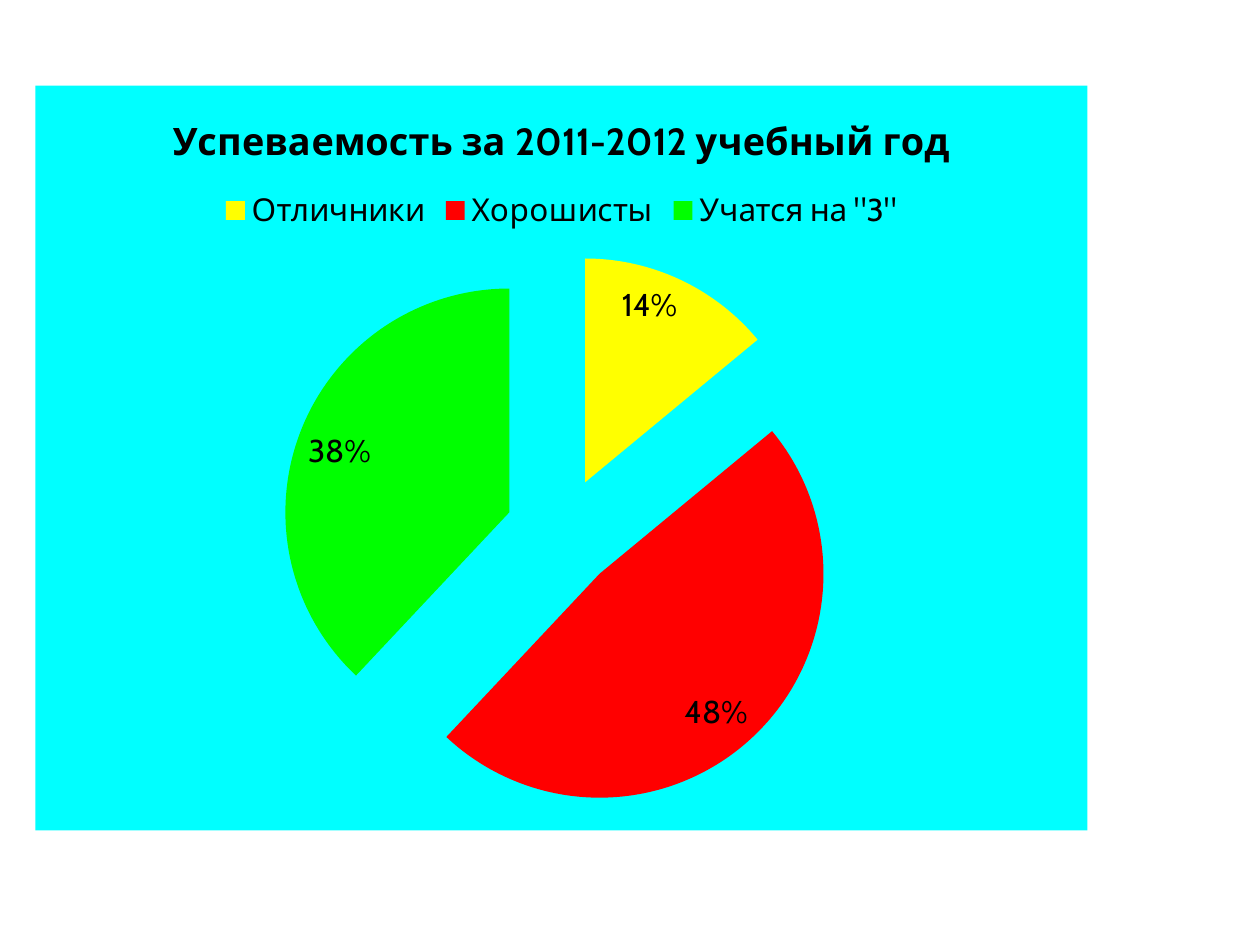
from pptx import Presentation
from pptx.chart.data import CategoryChartData
from pptx.dml.color import RGBColor
from pptx.enum.chart import XL_CHART_TYPE, XL_LABEL_POSITION, XL_LEGEND_POSITION
from pptx.oxml import parse_xml
from pptx.oxml.ns import nsdecls
from pptx.util import Inches, Pt

BLACK = RGBColor(0x00, 0x00, 0x00)
CYAN = "00FFFF"
TITLE = "Успеваемость за 2011-2012 учебный год"
SLICES = [
    ("Отличники", 14, RGBColor(0xFF, 0xFF, 0x00)),
    ("Хорошисты", 48, RGBColor(0xFF, 0x00, 0x00)),
    ('Учатся на "3"', 38, RGBColor(0x00, 0xFF, 0x00)),
]
EXPLOSION = 25
BODY = {"name": "Cabin", "size": Pt(18), "bold": False}
HEADING = {"name": "Cabin", "size": Pt(21.6), "bold": True}


def set_font(font, fmt):
    for key, value in fmt.items():
        setattr(font, key, value)
    font.color.rgb = BLACK


prs = Presentation()
prs.slide_width, prs.slide_height = Inches(10), Inches(7.5)
s = prs.slides.add_slide(prs.slide_layouts[6])

names, values, colors = zip(*SLICES)
data = CategoryChartData()
data.categories = names
data.add_series(TITLE, values)
box = [Inches(v) for v in (0.28, 0.68, 8.35, 5.91)]
chart = s.shapes.add_chart(XL_CHART_TYPE.PIE, *box, data).chart
set_font(chart.font, BODY)

chart.has_title = True
tf = chart.chart_title.text_frame
tf.text = TITLE
set_font(tf.paragraphs[0].runs[0].font, HEADING)
chart.chart_title.include_in_layout = False

chart.has_legend = True
chart.legend.position = XL_LEGEND_POSITION.TOP
chart.legend.include_in_layout = False
set_font(chart.legend.font, BODY)

plot = chart.plots[0]
plot.vary_by_categories = True
plot.has_data_labels = True
labels = plot.data_labels
labels.show_percentage = True
labels.show_value = False
labels.number_format = "0%"
labels.number_format_is_linked = False
labels.position = XL_LABEL_POSITION.INSIDE_END
set_font(labels.font, BODY)

series = plot.series[0]
for i, color in enumerate(colors):
    fmt = series.points[i].format
    fmt.fill.solid()
    fmt.fill.fore_color.rgb = color
    fmt.line.fill.background()
first_point = series._element.find(".//{*}dPt")
first_point.addprevious(parse_xml(f'<c:explosion {nsdecls("c")} val="{EXPLOSION}"/>'))

background = parse_xml(
    f'<c:spPr {nsdecls("c", "a")}><a:solidFill><a:srgbClr val="{CYAN}"/></a:solidFill>'
    "<a:ln><a:noFill/></a:ln></c:spPr>")
chart._chartSpace.find("{*}chart").addnext(background)

prs.save("out.pptx")
